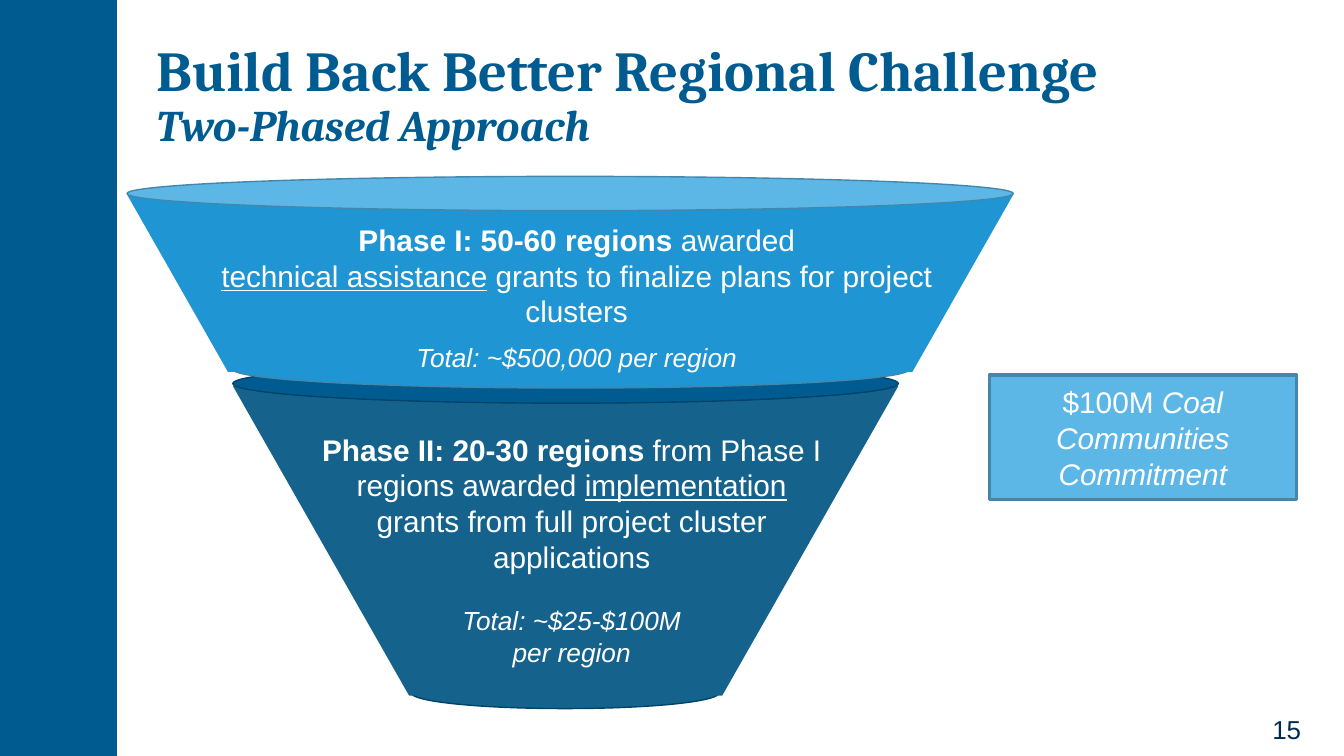
"""Build the two-phase funnel slide for the Regional Challenge."""
from dataclasses import dataclass

import pptx
import pptx.dml.color
import pptx.enum.shapes
import pptx.enum.text
import pptx.util

SHAPE = pptx.enum.shapes.MSO_SHAPE
ANCHOR = pptx.enum.text.MSO_ANCHOR
ALIGN = pptx.enum.text.PP_ALIGN
EMU_PER_PX = 9144
TAPER = 0.569


@dataclass(frozen=True)
class Theme:
    """Colours, fonts and type sizes of the slide."""
    navy: str = "005C90"
    navy_edge: str = "00446B"
    deep: str = "15638D"
    blue: str = "1F95D3"
    sky: str = "5CB7E7"
    sky_edge: str = "4487AB"
    white: str = "FFFFFF"
    ink: str = "002B51"
    heading: str = "Cambria"
    body: str = "Arial"
    title: float = 40.3
    subtitle: float = 31.2
    text: float = 21.3
    total: float = 18.7
    number: float = 18.5


THEME = Theme()


def px(n):
    """Turn px into EMU."""
    return pptx.util.Emu(n * EMU_PER_PX)


def rgb(code):
    """Turn a hex code into a colour."""
    return pptx.dml.color.RGBColor.from_string(code)


def add_block(s, kind, box, fill, edge=None, width=1):
    """Add a filled preset shape, outlined when an edge colour is given."""
    sp = s.shapes.add_shape(kind, *map(px, box))
    sp.shadow.inherit = False
    sp.fill.solid()
    sp.fill.fore_color.rgb = rgb(fill)
    if edge:
        sp.line.color.rgb = rgb(edge)
        sp.line.width = pptx.util.Pt(width)
    else:
        sp.line.fill.background()
    return sp


def add_funnel(s, box, fill):
    """Add a trapezoid that narrows downwards."""
    sp = add_block(s, SHAPE.TRAPEZOID, box, fill)
    sp.adjustments[0] = TAPER
    sp.rotation = 180


def add_text_box(s, box, inset=(10, 5), anchor=ANCHOR.TOP):
    """Add a wrapping text box and return its text frame."""
    tf = s.shapes.add_textbox(*map(px, box)).text_frame
    tf.word_wrap = True
    tf.vertical_anchor = anchor
    tf.margin_left = tf.margin_right = px(inset[0])
    tf.margin_top = tf.margin_bottom = px(inset[1])
    return tf


def style(font, size, color, name=THEME.body):
    """Set the size, colour and typeface of a font."""
    font.size = pptx.util.Pt(size)
    font.color.rgb = rgb(color)
    font.name = name


def add_run(p, text, marks=""):
    """Add a run marked with any of b, i and u."""
    r = p.add_run()
    r.text = text
    if "b" in marks:
        r.font.bold = True
    if "i" in marks:
        r.font.italic = True
    if "u" in marks:
        r.font.underline = True
    return r


def add_centred(tf, paragraphs):
    """Fill a frame with centred white paragraphs of (size, gap, runs)."""
    for i, (size, gap, runs) in enumerate(paragraphs):
        p = tf.add_paragraph() if i else tf.paragraphs[0]
        p.alignment = ALIGN.CENTER
        if gap:
            p.space_before = pptx.util.Pt(gap)
        style(p.font, size, THEME.white)
        for run in runs:
            add_run(p, *run)


def add_title(s):
    """Add the title and its italic second line."""
    tf = add_text_box(s, (142, 34, 1141, 125), (13, 7), ANCHOR.MIDDLE)
    p = tf.paragraphs[0]
    p.line_spacing = 0.9
    style(p.font, THEME.title, THEME.navy, THEME.heading)
    p.font.bold = True
    add_run(p, "Build Back Better Regional Challenge")
    p.add_line_break()
    r = add_run(p, "Two-Phased Approach", "i")
    r.font.size = pptx.util.Pt(THEME.subtitle)


def add_phase_two(s):
    """Add the lower funnel part and its text."""
    add_block(s, SHAPE.OVAL, (408, 672, 305, 31), THEME.deep, THEME.navy_edge)
    add_funnel(s, (231, 383, 660, 307), THEME.deep)
    add_centred(add_text_box(s, (304, 421, 526, 251), (13, 7)), [
        (THEME.text, 0, [("Phase II: 20-30 regions ", "b"),
                         ("from Phase I regions awarded ",),
                         ("implementation", "u"),
                         (" grants from full project cluster applications",)]),
        (THEME.total, 21.5, [("Total: ~$25-$100M", "i")]),
        (THEME.total, 0, [("per region", "i")]),
    ])
    add_block(s, SHAPE.OVAL, (231, 361, 660, 39), THEME.navy, THEME.navy_edge)


def add_phase_one(s):
    """Add the upper funnel part and its text."""
    add_block(s, SHAPE.OVAL, (231, 348, 671, 37), THEME.blue, THEME.sky_edge)
    add_funnel(s, (126, 193, 879, 176), THEME.blue)
    add_centred(add_text_box(s, (182, 215, 780, 163)), [
        (THEME.text, 0, [("Phase I: 50-60 regions ", "b"), ("awarded",)]),
        (THEME.text, 0, [("technical assistance", "u"),
                         (" grants to finalize plans for project clusters",)]),
        (THEME.total, 9, [("Total: ~$500,000 per region", "i")]),
    ])
    add_block(s, SHAPE.OVAL, (126, 175, 879, 34), THEME.sky, THEME.sky_edge)


def add_commitment(s):
    """Add the commitment box beside the funnel."""
    sp = add_block(s, SHAPE.RECTANGLE, (981, 372, 305, 124),
                   THEME.sky, THEME.sky_edge, 2.25)
    tf = sp.text_frame
    tf.word_wrap = True
    tf.vertical_anchor = ANCHOR.MIDDLE
    add_centred(tf, [(THEME.text, 0, [("$100M ",),
                                      ("Coal Communities Commitment", "i")])])


def add_page_number(s):
    """Add the page number."""
    p = add_text_box(s, (1252, 703, 68, 42)).paragraphs[0]
    style(p.font, THEME.number, THEME.ink)
    add_run(p, "15")


def main():
    """Build and save the slide."""
    prs = pptx.Presentation()
    prs.slide_width, prs.slide_height = px(1333), px(750)
    s = prs.slides.add_slide(prs.slide_layouts[6])
    add_block(s, SHAPE.RECTANGLE, (0, 0, 116, 750), THEME.navy)
    add_phase_two(s)
    add_phase_one(s)
    add_title(s)
    add_page_number(s)
    add_commitment(s)
    prs.save("out.pptx")


if __name__ == "__main__":
    main()
